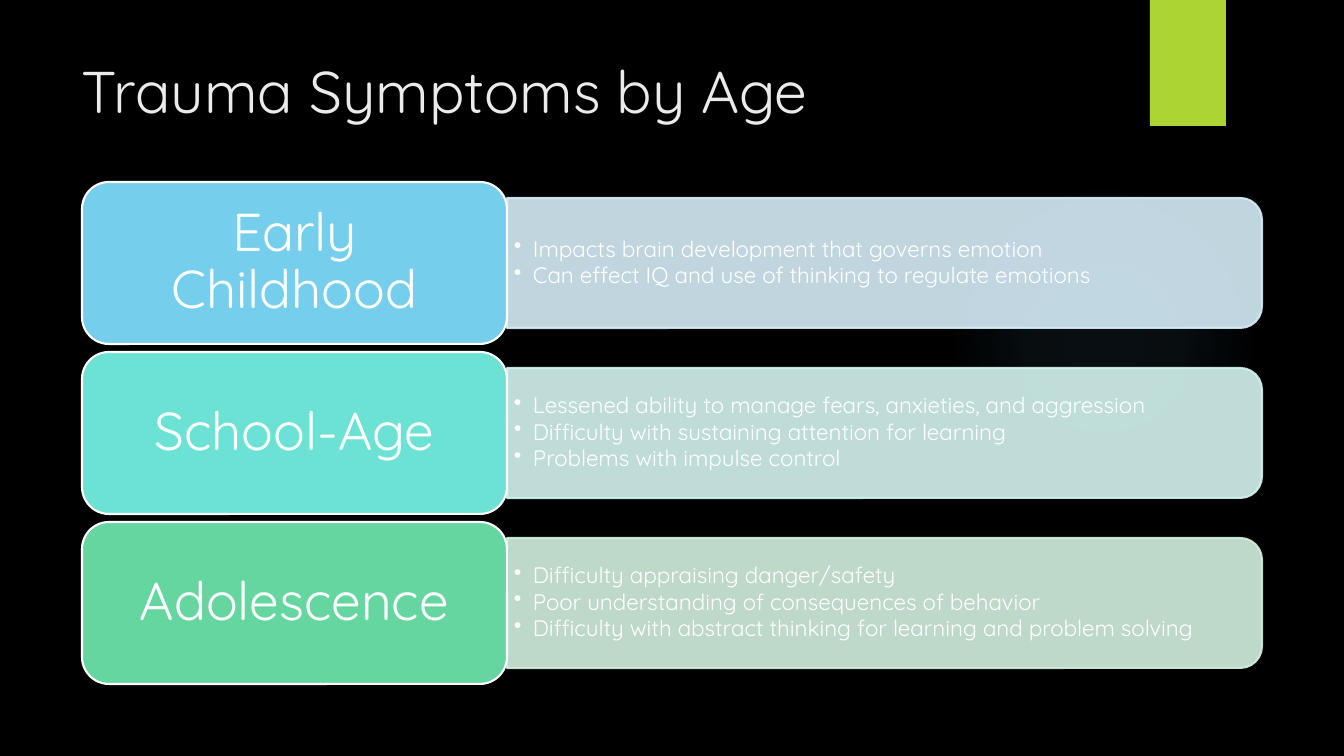
from pptx import Presentation
from pptx import util as u
from pptx.dml.color import RGBColor
from pptx.enum import shapes, text
from pptx.oxml import parse_xml
from pptx.oxml.ns import nsdecls, qn

FONT = "Quicksand"
SCALE = 12192000 / 1344
LABEL_X, LABEL_W, LABEL_H = 82, 425, 162
PANEL_W, PANEL_H = 755, 130
TOP, PITCH = 182, 170
KIND = shapes.MSO_SHAPE

STAGES = [
    ("Early Childhood", "75CEEC", "D6EDF8",
     ["Impacts brain development that governs emotion",
      "Can effect IQ and use of thinking to regulate emotions"]),
    ("School-Age", "6CE2D5", "D4F4F0",
     ["Lessened ability to manage fears, anxieties, and aggression",
      "Difficulty with sustaining attention for learning",
      "Problems with impulse control"]),
    ("Adolescence", "65D6A0", "D3F0DF",
     ["Difficulty appraising danger/safety",
      "Poor understanding of consequences of behavior",
      "Difficulty with abstract thinking for learning and problem solving"]),
]


def px(n):
    return u.Emu(round(n * SCALE))


def rgb(value):
    return RGBColor.from_string(value)


def set_alpha(fill, percent):
    clr = fill._xPr.find(qn("a:solidFill"))[0]
    clr.append(parse_xml(f'<a:alpha {nsdecls("a")} val="{percent * 1000}"/>'))


def add_shape(s, kind, x, y, w, h, fill=None, line=None, alpha=None):
    sp = s.shapes.add_shape(kind, px(x), px(y), px(w), px(h))
    sp.shadow.inherit = False
    if fill:
        sp.fill.solid()
        sp.fill.fore_color.rgb = rgb(fill)
    else:
        sp.fill.background()
    if line:
        sp.line.color.rgb = rgb(line)
        sp.line.width = u.Pt(1.5)
    else:
        sp.line.fill.background()
    if alpha:
        set_alpha(sp.fill, alpha)
        set_alpha(sp.line.fill, alpha)
    return sp


def add_glow(s, x, y, size, color):
    sp = add_shape(s, KIND.OVAL, x, y, size, size)
    stops = "".join(
        f'<a:gs pos="{pos * 1000}"><a:srgbClr val="{color}">'
        f'<a:alpha val="{alpha * 1000}"/></a:srgbClr></a:gs>'
        for pos, alpha in [(0, 7), (36, 6), (69, 0), (100, 0)])
    grad = parse_xml(
        f'<a:gradFill {nsdecls("a")}><a:gsLst>{stops}</a:gsLst><a:path path="circle">'
        '<a:fillToRect l="50000" t="50000" r="50000" b="50000"/></a:path></a:gradFill>')
    spPr = sp._element.spPr
    spPr.replace(spPr.find(qn("a:noFill")), grad)


def add_bullet(p, indent):
    pPr = p._p.get_or_add_pPr()
    pPr.set("marL", str(px(indent)))
    pPr.set("indent", str(-px(indent)))
    pPr.append(parse_xml(f'<a:buChar {nsdecls("a")} char="•"/>'))


def write(sp, lines, size, color="FFFFFF", align=text.PP_ALIGN.LEFT,
          anchor=text.MSO_ANCHOR.MIDDLE, inset=(7, 3), spacing=0.9, after=0, bullet=0):
    tf = sp.text_frame
    tf.word_wrap = True
    tf.vertical_anchor = anchor
    tf.margin_left = tf.margin_right = px(inset[0])
    tf.margin_top = tf.margin_bottom = px(inset[1])
    for i, line in enumerate(lines):
        p = tf.paragraphs[0] if i == 0 else tf.add_paragraph()
        if bullet:
            add_bullet(p, bullet)
        p.alignment = align
        p.line_spacing = spacing
        p.space_after = u.Pt(after)
        r = p.add_run()
        r.text = line
        r.font.name = FONT
        r.font.size = u.Pt(size)
        r.font.color.rgb = rgb(color)


def add_text(s, x, y, w, h, lines, **fmt):
    write(s.shapes.add_textbox(px(x), px(y), px(w), px(h)), lines, **fmt)


def add_stage(s, y, name, color, tint, symptoms):
    panel_x = LABEL_X + LABEL_W
    mid_x, mid_y = panel_x + PANEL_W / 2, y + LABEL_H / 2
    panel = add_shape(s, KIND.ROUND_2_SAME_RECTANGLE, mid_x - PANEL_H / 2,
                      mid_y - PANEL_W / 2, PANEL_H, PANEL_W, tint, tint, alpha=90)
    panel.rotation = 90
    add_text(s, panel_x, mid_y - 58, PANEL_W - 6, 116, symptoms,
             size=16, after=1.7, bullet=19)
    label = add_shape(s, KIND.ROUNDED_RECTANGLE, LABEL_X, y, LABEL_W, LABEL_H,
                      color, "FFFFFF")
    write(label, [name], size=38, align=text.PP_ALIGN.CENTER, inset=(16, 8))


def main():
    prs = Presentation()
    prs.slide_width, prs.slide_height = px(1344), px(756)
    s = prs.slides.add_slide(prs.slide_layouts[6])
    s.background.fill.solid()
    s.background.fill.fore_color.rgb = rgb("000000")
    add_glow(s, 949, 184, 310, "7AC4F0")
    add_shape(s, KIND.RECTANGLE, 1150, 0, 76, 126, "ACD433")
    add_text(s, 72, 50, 1037, 154, ["Trauma Symptoms by Age"], size=42, color="EBEBEB",
             anchor=text.MSO_ANCHOR.TOP, inset=(10, 5), spacing=1.0)
    for i, stage in enumerate(STAGES):
        add_stage(s, TOP + i * PITCH, *stage)
    prs.save("out.pptx")


if __name__ == "__main__":
    main()
